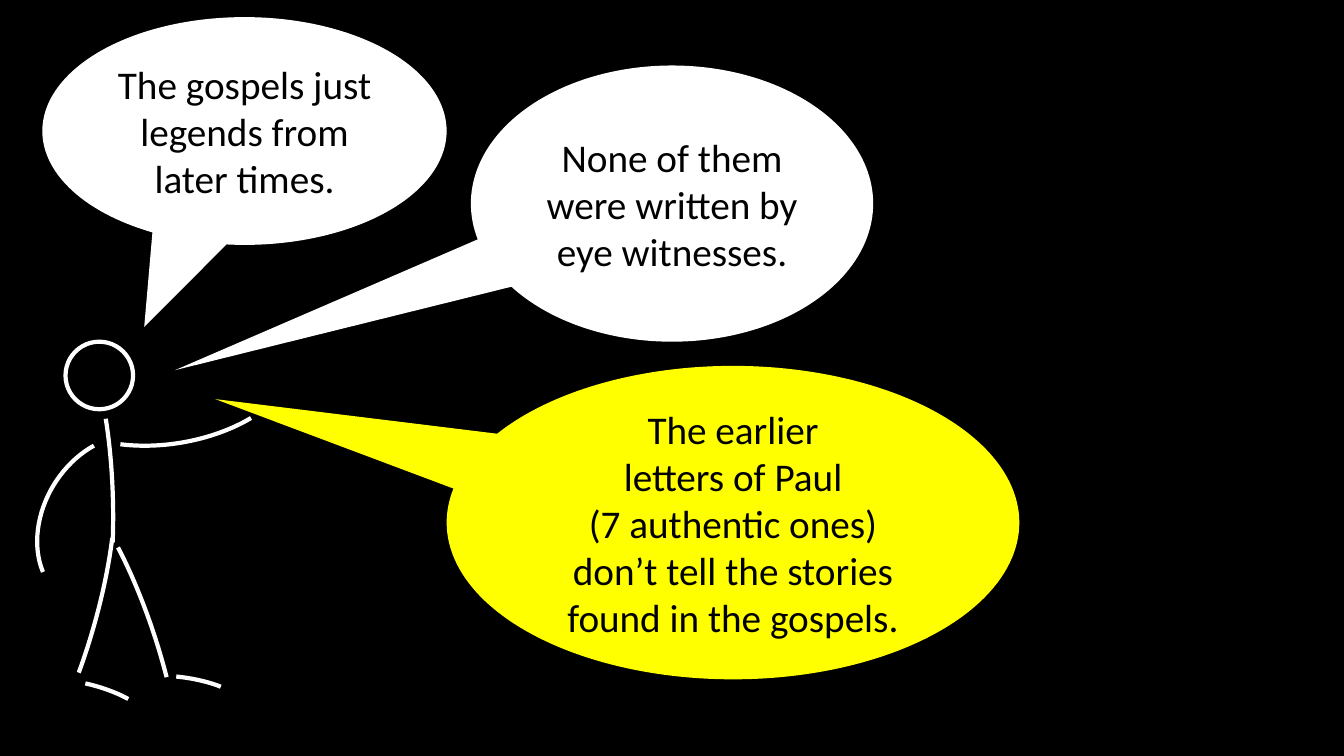
from dataclasses import dataclass

import pptx
import pptx.dml.color
import pptx.enum.shapes
import pptx.enum.text
import pptx.shapes.autoshape
import pptx.shapes.group
import pptx.slide
import pptx.util

Inches = pptx.util.Inches
Color = pptx.dml.color.RGBColor
Preset = pptx.enum.shapes.MSO_SHAPE
Box = tuple[float, float, float, float]


@dataclass(frozen=True)
class Theme:
    black: Color = Color(0, 0, 0)
    white: Color = Color(255, 255, 255)
    yellow: Color = Color(255, 255, 0)
    font: str = "Calibri"
    speech_size: int = 28
    limb_width: int = 3


@dataclass(frozen=True)
class Limb:
    box: Box
    rotation: float
    start: float = 176.07
    mirrored: bool = False


@dataclass(frozen=True)
class Bubble:
    box: Box
    tail: tuple[float, float]
    fill: Color
    paragraphs: tuple[str, ...]


THEME = Theme()
ARC_END = 26.76
HEAD: Box = (0.65, 3.39, 0.67, 0.67)
LIMBS = (
    Limb((0.18, 3.17, 0.94, 3.55), 358.3, 179.1),  # torso
    Limb((0.61, 4.66, 0.94, 3.55), 341.7),  # right leg
    Limb((0, 4.34, 0.94, 3.55), 16.2),  # left leg
    Limb((0.8, 6.44, 0.26, 0.99), 106.4, 171.91, True),  # left foot
    Limb((1.72, 6.36, 0.26, 0.99), 99.3, 171.91, True),  # right foot
    Limb((0.43, 4.27, 1.39, 1.81), 211),  # hanging arm
    Limb((0.99, 2.45, 1.39, 2.51), 80.4, 185.03),  # raised arm
)
BUBBLES = (
    Bubble((0.42, 0.17, 4.01, 2.26), (-0.248, 0.86), THEME.white,
           ("The gospels just legends from later times.",)),
    Bubble((4.43, 3.63, 5.68, 3.11), (-0.904, -0.394), THEME.yellow,
           ("The earlier", "letters of Paul",
            "(7 authentic ones)\vdon’t tell the stories found in the gospels.")),
    Bubble((4.67, 0.65, 3.99, 2.74), (-1.235, 0.603), THEME.white,
           ("None of them were written by eye witnesses.",)),
)


def add_filled(page: pptx.slide.Slide, preset: Preset, box: Box,
               fill: Color) -> pptx.shapes.autoshape.Shape:
    shape = page.shapes.add_shape(preset, *map(Inches, box))
    shape.shadow.inherit = False
    shape.fill.solid()
    shape.fill.fore_color.rgb = fill
    shape.line.fill.background()
    return shape


def add_stroke(figure: pptx.shapes.group.GroupShape, preset: Preset,
               box: Box) -> pptx.shapes.autoshape.Shape:
    """Add an unfilled white outline to the stick figure."""
    stroke = figure.shapes.add_shape(preset, *map(Inches, box))
    stroke.shadow.inherit = False
    stroke.fill.background()
    stroke.line.color.rgb = THEME.white
    stroke.line.width = pptx.util.Pt(THEME.limb_width)
    return stroke


def add_limb(figure: pptx.shapes.group.GroupShape, limb: Limb) -> None:
    arc = add_stroke(figure, Preset.ARC, limb.box)
    arc.adjustments[0] = limb.start
    arc.adjustments[1] = ARC_END
    arc.rotation = limb.rotation
    if limb.mirrored:
        arc.element.spPr.get_or_add_xfrm().set("flipH", "1")


def add_bubble(page: pptx.slide.Slide, bubble: Bubble) -> None:
    callout = add_filled(page, Preset.OVAL_CALLOUT, bubble.box, bubble.fill)
    callout.adjustments[0], callout.adjustments[1] = bubble.tail
    frame = callout.text_frame
    frame.word_wrap = True
    frame.vertical_anchor = pptx.enum.text.MSO_ANCHOR.MIDDLE
    frame.text = "\n".join(bubble.paragraphs)
    for para in frame.paragraphs:
        para.alignment = pptx.enum.text.PP_ALIGN.CENTER
        para.font.name = THEME.font
        para.font.size = pptx.util.Pt(THEME.speech_size)
        para.font.color.rgb = THEME.black


def main() -> None:
    deck = pptx.Presentation()
    deck.slide_width, deck.slide_height = Inches(13.33), Inches(7.5)
    page = deck.slides.add_slide(deck.slide_layouts.get_by_name("Blank"))
    add_filled(page, Preset.RECTANGLE, (0, 0, 13.33, 7.5), THEME.black)
    figure = page.shapes.add_group_shape()
    add_stroke(figure, Preset.OVAL, HEAD)
    for limb in LIMBS:
        add_limb(figure, limb)
    for bubble in BUBBLES:
        add_bubble(page, bubble)
    deck.save("out.pptx")


if __name__ == "__main__":
    main()
